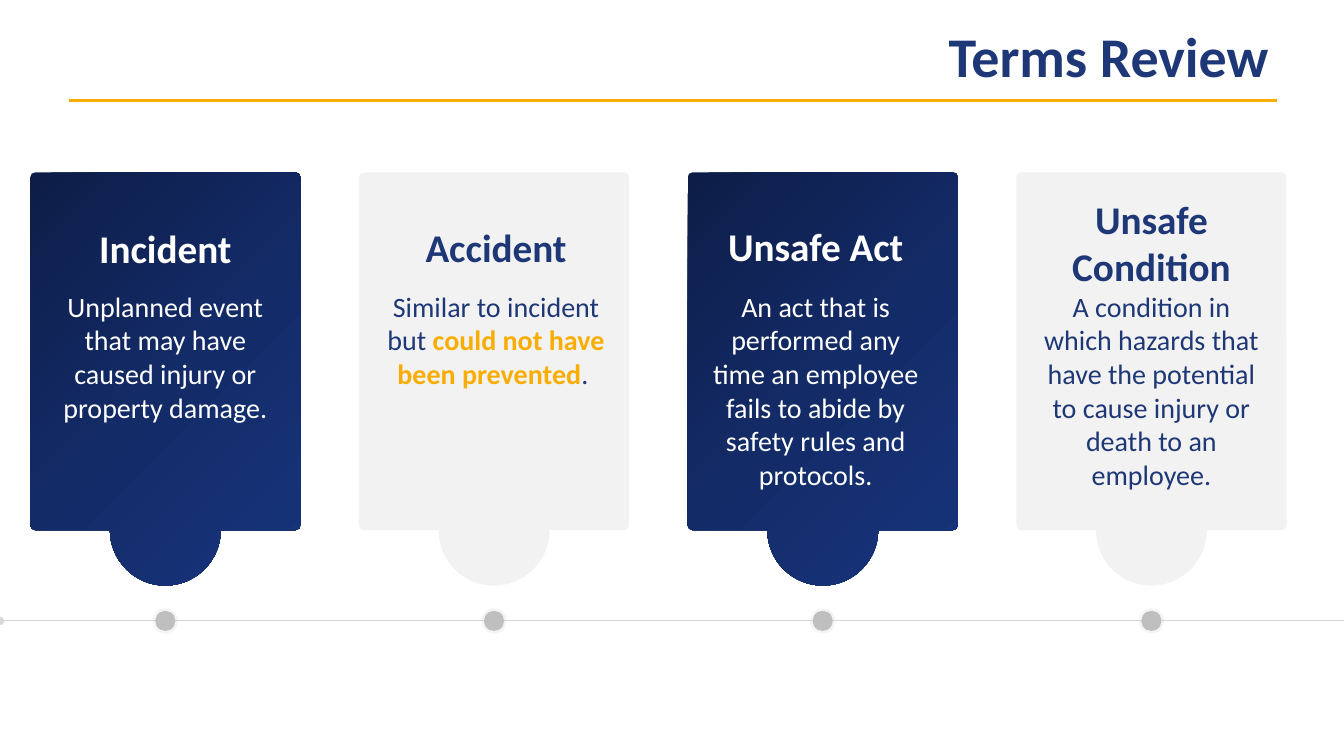
"""Build the Terms Review slide: four term cards above a timeline."""
import copy

from lxml import etree
from pptx import Presentation
from pptx import util as u
from pptx.dml.color import RGBColor
from pptx.enum import shapes, text
from pptx.oxml.ns import qn

TITLE = "Terms Review"
CARDS = [
    {"term": "Incident", "dark": True, "shift": 0, "top": 2.18, "height": 0.57,
     "meaning": [("Unplanned event that may have caused injury or property damage.", False)]},
    {"term": "Accident", "dark": False, "shift": 0.02, "top": 2.17, "height": 0.57,
     "meaning": [("Similar to incident but ", False),
                 ("could not have been prevented", True), (". ", False)]},
    {"term": "Unsafe Act", "dark": True, "shift": -0.07, "top": 2.16, "height": 0.57,
     "meaning": [("An act that is performed any time an employee fails to abide by "
                  "safety rules and protocols.", False)]},
    {"term": "Unsafe Condition", "dark": False, "shift": 0, "top": 1.89, "height": 1.04,
     "meaning": [("A condition in which hazards that have the potential to cause injury "
                  "or death to an employee.", False)]},
]
COLORS = {"navy": "1E3776", "gold": "F9AD00", "white": "FFFFFF", "card": "F2F2F2",
          "dot": "BFBFBF", "timeline": "D8D8D8"}
GRADIENT = [(0, "0D1D47"), (0.5, "132B67"), (1, "17347C")]
FONT = "Calibri"
SLIDE_W, SLIDE_H = 13.33, 7.5
FIRST_LEFT, PITCH = 0.3, 3.26
CARD_TOP, CARD_W, CARD_H = 1.71, 2.68, 3.55
CORNER, TAB_RADIUS = 0.05, 0.55
UNITS_PER_INCH = 1000
CURVE_PULL = 0.55
MEANING_TOP, MEANING_W = 2.82, 2.45
TIMELINE_Y = 6.16
DOTS = [(0.25, 17), (0.2, 100)]


def color(name):
    return RGBColor.from_string(COLORS[name])


def add_line(page, start, end, name, width):
    line = page.shapes.add_connector(shapes.MSO_CONNECTOR.STRAIGHT,
                                     *map(u.Inches, (*start, *end)))
    line.line.color.rgb = color(name)
    line.line.width = u.Pt(width)
    etree.SubElement(line._element.spPr, qn("a:effectLst"))
    return line


def add_solid(page, kind, left, top, width, height, name):
    shape = page.shapes.add_shape(kind, *map(u.Inches, (left, top, width, height)))
    shape.shadow.inherit = False
    shape.fill.solid()
    shape.fill.fore_color.rgb = color(name)
    shape.line.fill.background()
    return shape


def add_circle(page, center, middle, size, name):
    return add_solid(page, shapes.MSO_SHAPE.OVAL, center - size / 2, middle - size / 2,
                     size, size, name)


def bend(segment, start, corner, end):
    """Turn a straight segment into a quarter-circle curve around its corner."""
    controls = [[a + CURVE_PULL * (c - a) for a, c in zip(point, corner)]
                for point in (start, end)]
    segment.tag = qn("a:cubicBezTo")
    for child in list(segment):
        segment.remove(child)
    for x, y in (*controls, end):
        etree.SubElement(segment, qn("a:pt"), x=str(round(x)), y=str(round(y)))


def add_dark_card(page, left):
    right, bottom, corner, radius = (round(length * UNITS_PER_INCH) for length in
                                     (CARD_W, CARD_H, CORNER, TAB_RADIUS))
    center, tip = right // 2, bottom + radius
    start = (corner, 0)
    steps = [
        ((right - corner, 0), None), ((right, corner), (right, 0)),
        ((right, bottom - corner), None), ((right - corner, bottom), (right, bottom)),
        ((center + radius, bottom), None),
        ((center, tip), (center + radius, tip)),
        ((center - radius, bottom), (center - radius, tip)),
        ((corner, bottom), None), ((0, bottom - corner), (0, bottom)),
        ((0, corner), None), (start, (0, 0)),
    ]
    ends = [end for end, _ in steps]
    builder = page.shapes.build_freeform(*start, scale=u.Inches(1) / UNITS_PER_INCH)
    builder.add_line_segments(ends, close=True)
    card = builder.convert_to_shape(u.Inches(left), u.Inches(CARD_TOP))
    segments = list(card._element.spPr.iter(qn("a:lnTo")))
    for segment, begin, (end, outer) in zip(segments, [start, *ends], steps):
        if outer:
            bend(segment, begin, outer, end)
    card.shadow.inherit = False
    card.line.fill.background()
    card.fill.gradient()
    card.fill.gradient_angle = 315
    stops = card._element.spPr.find(".//" + qn("a:gsLst"))
    stops.append(copy.deepcopy(stops[0]))
    for stop, (position, shade) in zip(card.fill.gradient_stops, GRADIENT):
        stop.position = position
        stop.color.rgb = RGBColor.from_string(shade)


def add_light_card(page, left):
    card = add_solid(page, shapes.MSO_SHAPE.ROUNDED_RECTANGLE, left, CARD_TOP,
                     CARD_W, CARD_H, "card")
    card.adjustments[0] = 0.02
    add_circle(page, left + CARD_W / 2, CARD_TOP + CARD_H, 2 * TAB_RADIUS, "card")


def write(box, runs, size, align, anchor):
    frame = box.text_frame
    settings = {"word_wrap": True, "auto_size": text.MSO_AUTO_SIZE.NONE,
                "vertical_anchor": anchor,
                "margin_left": u.Inches(0.1), "margin_right": u.Inches(0.1),
                "margin_top": u.Inches(0.05), "margin_bottom": u.Inches(0.05)}
    for key, value in settings.items():
        setattr(frame, key, value)
    para = frame.paragraphs[0]
    para.alignment = align
    for words, name, bold in runs:
        span = para.add_run()
        span.text = words
        for key, value in {"name": FONT, "size": u.Pt(size), "bold": bold}.items():
            setattr(span.font, key, value)
        span.font.color.rgb = color(name)
    return para


def add_text(page, center, top, width, height, runs, size):
    box = page.shapes.add_textbox(*map(u.Inches, (center - width / 2, top, width, height)))
    write(box, runs, size, text.PP_ALIGN.CENTER, text.MSO_ANCHOR.TOP)


def add_card(page, index, card):
    left = FIRST_LEFT + index * PITCH
    center = left + CARD_W / 2
    draw = add_dark_card if card["dark"] else add_light_card
    draw(page, left)
    for size, opacity in DOTS:
        dot = add_circle(page, center, TIMELINE_Y, size, "dot")
        if opacity < 100:
            shade = dot._element.spPr.find(".//" + qn("a:srgbClr"))
            etree.SubElement(shade, qn("a:alpha"), val=str(opacity * 1000))
    ink = "white" if card["dark"] else "navy"
    middle = center + card["shift"]
    add_text(page, middle, card["top"], CARD_W, card["height"], [(card["term"], ink, True)], 28)
    meaning = [(words, "gold" if strong else ink, strong) for words, strong in card["meaning"]]
    add_text(page, middle, MEANING_TOP, MEANING_W, 2.12, meaning, 20)


def main():
    deck = Presentation()
    deck.slide_width, deck.slide_height = u.Inches(SLIDE_W), u.Inches(SLIDE_H)
    page = deck.slides.add_slide(deck.slide_layouts[5])
    title = page.shapes.title
    for key, value in {"left": 0.68, "top": 0.17, "width": 12, "height": 0.83}.items():
        setattr(title, key, u.Inches(value))
    heading = write(title, [(TITLE, "navy", True)], 40, text.PP_ALIGN.RIGHT,
                    text.MSO_ANCHOR.MIDDLE)
    heading.line_spacing = 0.9
    add_line(page, (0.68, 1), (12.67, 1), "gold", 2.25)
    timeline = add_line(page, (0, TIMELINE_Y), (SLIDE_W, TIMELINE_Y), "timeline", 0.75)
    etree.SubElement(timeline.line._get_or_add_ln(), qn("a:headEnd"), type="oval")
    for index, card in enumerate(CARDS):
        add_card(page, index, card)
    deck.save("out.pptx")


if __name__ == "__main__":
    main()
